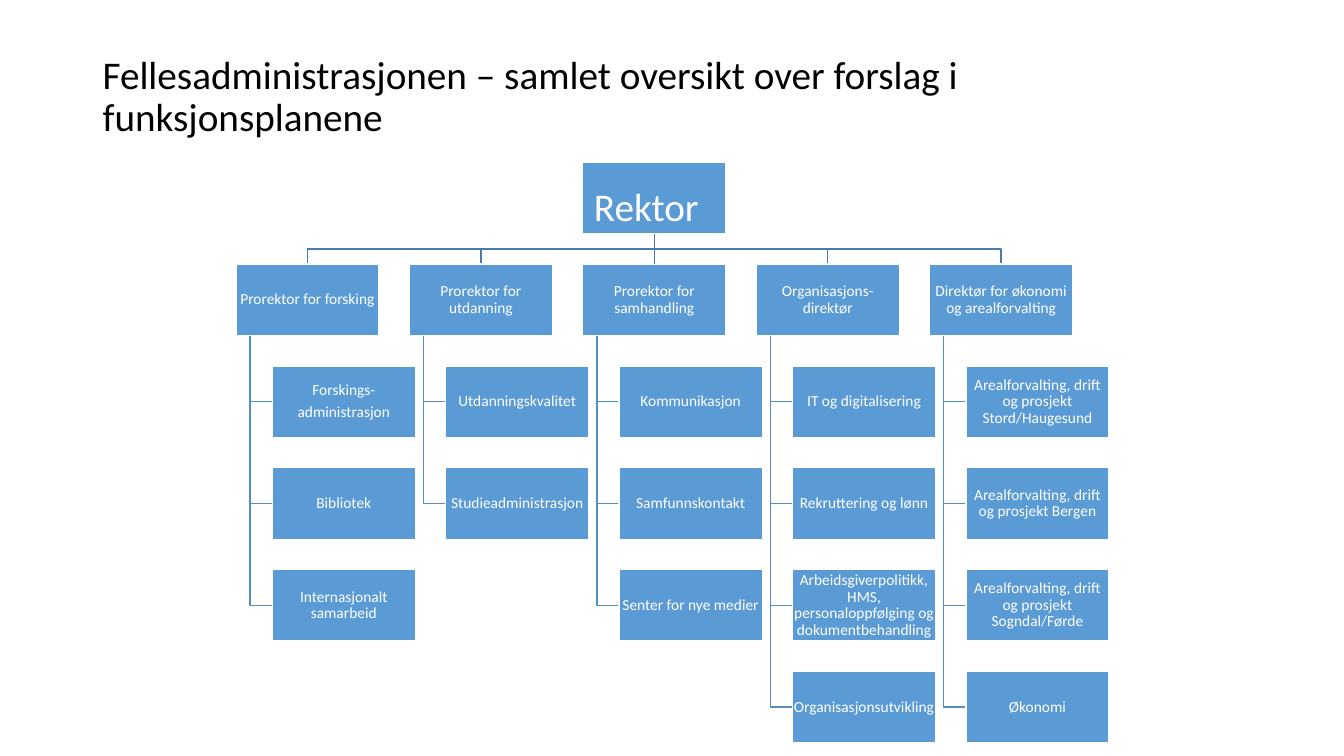
from lxml import etree
from pptx import Presentation
from pptx import util as u
from pptx.dml.color import RGBColor
from pptx.enum import shapes, text
from pptx.oxml.ns import qn

COLORS = {"box": "5B9BD5", "edge": "FFFFFF", "label": "FFFFFF", "title": "000000",
          "top_line": "497CAB", "branch_line": "538DC1"}
FONT = "Calibri"
LEFT, TOP = 2.34, 1.61
COLUMN, ROW = 1.72, 1.01
BOX_WIDTH, BOX_HEIGHT = 1.42, 0.71
INDENT, TRUNK = 0.36, 0.14
ROOT_COLUMN = 2

BRANCHES = [
    ("Prorektor for forsking",
     ["Forskings-\nadministrasjon", "Bibliotek", "Internasjonalt samarbeid"]),
    ("Prorektor for utdanning",
     ["Utdanningskvalitet", "Studieadministrasjon"]),
    ("Prorektor for samhandling",
     ["Kommunikasjon", "Samfunnskontakt", "Senter for nye medier"]),
    ("Organisasjons-direktør",
     ["IT og digitalisering", "Rekruttering og lønn",
      "Arbeidsgiverpolitikk, HMS, personaloppfølging og dokumentbehandling",
      "Organisasjonsutvikling"]),
    ("Direktør for økonomi og arealforvalting",
     ["Arealforvalting, drift og prosjekt Stord/Haugesund",
      "Arealforvalting, drift og prosjekt Bergen",
      "Arealforvalting, drift og prosjekt Sogndal/Førde",
      "Økonomi"]),
]


def color(name):
    return RGBColor.from_string(COLORS[name])


def column_left(column):
    return LEFT + column * COLUMN


def column_middle(column):
    return column_left(column) + BOX_WIDTH / 2


def row_top(row):
    return TOP + row * ROW


def format_text(frame, size, name, align):
    frame.word_wrap = True
    frame.vertical_anchor = text.MSO_ANCHOR.MIDDLE
    for para in frame.paragraphs:
        para.alignment = align
        para.line_spacing = 0.9
        para.space_after = u.Pt(0.35 * size)
        for span in para.runs:
            span.font.size = u.Pt(size)
            span.font.name = FONT
            span.font.color.rgb = color(name)


def add_title(page, wording):
    box = page.shapes.add_textbox(u.Inches(0.92), u.Inches(0.4), u.Inches(11.5), u.Inches(1.14))
    box.text_frame.text = wording
    format_text(box.text_frame, 28, "title", text.PP_ALIGN.LEFT)
    box.text_frame.paragraphs[0].space_after = u.Pt(0)


def add_box(page, left, row, label, size=11, inset=0.01):
    box = page.shapes.add_shape(shapes.MSO_SHAPE.RECTANGLE, u.Inches(left), u.Inches(row_top(row)),
                                u.Inches(BOX_WIDTH), u.Inches(BOX_HEIGHT))
    box.shadow.inherit = False
    box.fill.solid()
    box.fill.fore_color.rgb = color("box")
    box.line.color.rgb = color("edge")
    box.line.width = u.Pt(1)
    frame = box.text_frame
    frame.margin_left = frame.margin_right = u.Inches(inset)
    frame.margin_top = frame.margin_bottom = u.Inches(inset)
    frame.text = label
    format_text(frame, size, "label", text.PP_ALIGN.CENTER)
    return box


def add_bent_line(page, points, name):
    start, *rest = [(u.Inches(x), u.Inches(y)) for x, y in points]
    builder = page.shapes.build_freeform(*start)
    builder.add_line_segments(rest, close=False)
    line = builder.convert_to_shape()
    line.shadow.inherit = False
    line.fill.background()
    line.line.color.rgb = color(name)
    line.line.width = u.Pt(1)


def join_boxes(page, upper, lower):
    line = page.shapes.add_connector(shapes.MSO_CONNECTOR.STRAIGHT, 0, 0, 0, 0)
    line.begin_connect(upper, 2)
    line.end_connect(lower, 0)
    line.line.color.rgb = color("top_line")
    line.line.width = u.Pt(1)
    etree.SubElement(line._element.spPr, qn("a:effectLst"))


def add_top_line(page, column):
    start, end = row_top(0) + BOX_HEIGHT, row_top(1)
    middle = (start + end) / 2
    root, head = column_middle(ROOT_COLUMN), column_middle(column)
    add_bent_line(page, [(root, start), (root, middle), (head, middle), (head, end)], "top_line")


def add_branch(page, column, head, units):
    left = column_left(column)
    trunk = left + TRUNK
    for row in range(len(units) + 1, 1, -1):
        middle = row_top(row) + BOX_HEIGHT / 2
        add_bent_line(page, [(trunk, row_top(1) + BOX_HEIGHT), (trunk, middle),
                             (left + INDENT, middle)], "branch_line")
    for row, unit in enumerate(units, 2):
        add_box(page, left + INDENT, row, unit)
    return add_box(page, left, 1, head)


def add_root(page):
    box = add_box(page, column_left(ROOT_COLUMN), 0, "Rektor", 28, 0.02)
    span = box.text_frame.paragraphs[0].add_run()
    span.text = " "
    span.font.size = u.Pt(51)
    span.font.name = FONT
    return box


def main():
    deck = Presentation()
    deck.slide_width, deck.slide_height = u.Inches(13.33), u.Inches(7.5)
    page = deck.slides.add_slide(deck.slide_layouts[6])
    add_title(page, "Fellesadministrasjonen – samlet oversikt over forslag i funksjonsplanene")
    for column in range(len(BRANCHES)):
        if column != ROOT_COLUMN:
            add_top_line(page, column)
    heads = [add_branch(page, column, head, units)
             for column, (head, units) in enumerate(BRANCHES)]
    join_boxes(page, add_root(page), heads[ROOT_COLUMN])
    deck.save("out.pptx")


if __name__ == "__main__":
    main()
